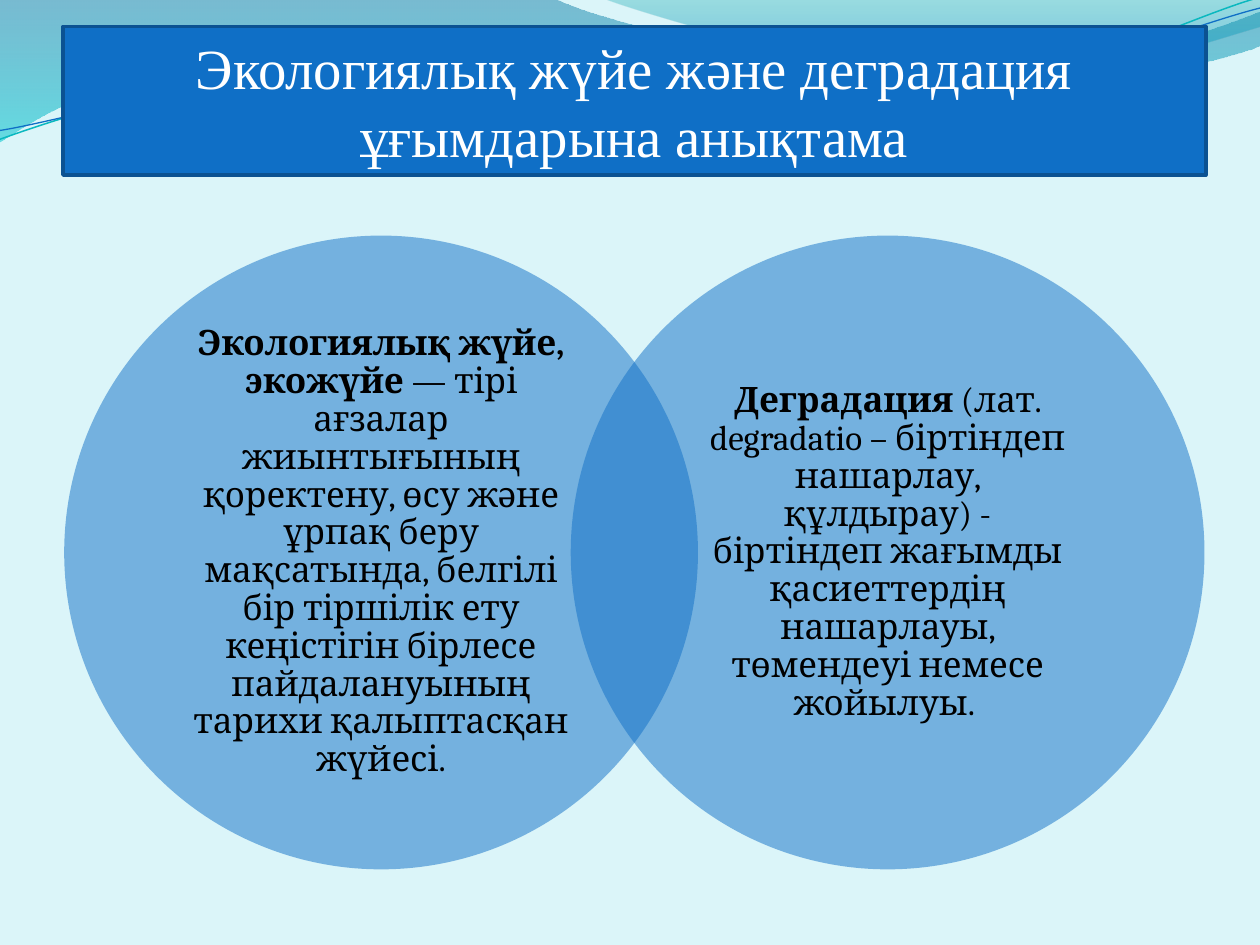
from pptx import Presentation
from pptx.dml.color import RGBColor
from pptx.enum import shapes, text
from pptx.oxml import ns
from pptx.util import Inches, Pt
from lxml import etree

BLUE = RGBColor(0x0F, 0x6F, 0xC6)
DARK_BLUE = RGBColor(0x0B, 0x52, 0x92)
TEAL = RGBColor(0x0A, 0xB8, 0xBF)
PALE = RGBColor(0xDB, 0xF5, 0xF9)
WHITE = RGBColor(0xFF, 0xFF, 0xFF)
BLACK = RGBColor(0, 0, 0)
WAVE_BLUE = RGBColor(0x00, 0x74, 0xA1)
WAVE_CYAN = RGBColor(0x00, 0xC6, 0xCF)
CREST_TEAL = RGBColor(0x00, 0xA1, 0xA9)
CREST_BLUE = RGBColor(0x00, 0x8B, 0xBF)

STRAND_TILT = -2.7

# Each segment is an end point (2 numbers) or a cubic curve (6 numbers).
WAVES = [
    ((0, 0), [(4.4, -0.01), (4.76, 0.17, 6.64, 0.63, 7.58, 0.63),
              (8.53, 0.63, 9.58, 0.26, 10, 0.09), (10.01, 0.36),
              (9.83, 0.44, 8.7, 0.76, 7.46, 0.75),
              (6.22, 0.75, 3.82, 0.28, 2.57, 0.34),
              (1.29, 0.36, 0.46, 0.83, -0.01, 1.13), (0, 0)],
     [(0, WAVE_BLUE, 45), (1, WAVE_CYAN, 55)]),
    ((4.79, -0.01), [(5.09, 0.11, 6.82, 0.62, 7.69, 0.65),
                     (8.56, 0.69, 9.61, 0.32, 10, 0.21), (10, 0),
                     (4.79, -0.01)],
     [(0, CREST_TEAL, 30), (0.8, CREST_BLUE, 45)]),
]
# Strands are given level and tilted afterwards.
STRANDS = [
    ((-0.02, 0.87), [(0.47, 0.72, 1.58, 0.41, 2.78, 0.42),
                     (3.96, 0.42, 5.91, 0.93, 7.12, 0.9),
                     (8.32, 0.87, 9.4, 0.36, 10, 0.22)], TEAL, 0.85),
    ((-0.02, 0.8), [(0.46, 0.75, 1.64, 0.45, 2.83, 0.46),
                    (4.03, 0.46, 5.96, 0.89, 7.16, 0.85),
                    (8.35, 0.83, 9.42, 0.42, 10.02, 0.3)], BLUE, 0.75),
]

TITLE = "Экологиялық жүйе және деградация ұғымдарына анықтама"
TERMS = [
    ("Экологиялық жүйе, экожүйе ",
     "— тірі ағзалар жиынтығының қоректену, өсу және ұрпақ беру мақсатында, "
     "белгілі бір тіршілік ету кеңістігін бірлесе пайдалануының тарихи "
     "қалыптасқан жүйесі."),
    ("Деградация",
     " (лат. degradatio – біртіндеп нашарлау, құлдырау) - біртіндеп жағымды "
     "қасиеттердің нашарлауы, төмендеуі немесе жойылуы. "),
]


def set_opacity(color_element, percent):
    alpha = etree.SubElement(color_element, ns.qn("a:alpha"))
    alpha.set("val", str(percent * 1000))


def add_outline(parts, start, segments, close):
    """Draw a freeform through the end points, then bend its cubic segments."""
    builder = parts.build_freeform(Inches(start[0]), Inches(start[1]))
    builder.add_line_segments(
        [(Inches(s[-2]), Inches(s[-1])) for s in segments], close=close)
    outline = builder.convert_to_shape()
    outline.shadow.inherit = False
    lines = list(outline._element.spPr.iter(ns.qn("a:lnTo")))
    left, top = (min(Inches(p[axis]) for p in [start, *segments])
                 for axis in (-2, -1))
    for line, segment in zip(lines, segments):
        if len(segment) == 2:
            continue
        line_parent = line.getparent()
        curve = etree.Element(ns.qn("a:cubicBezTo"))
        for x, y in zip(segment[::2], segment[1::2]):
            point = etree.SubElement(curve, ns.qn("a:pt"))
            point.set("x", str(Inches(x) - left))
            point.set("y", str(Inches(y) - top))
        line_parent.replace(line, curve)
    return outline


def add_waves(slide):
    for start, segments, stops in WAVES:
        wave = add_outline(slide.shapes, start, segments, close=True)
        wave.line.fill.background()
        wave.fill.gradient()
        wave.fill.gradient_angle = 270
        for stop, (position, color, _) in zip(wave.fill.gradient_stops, stops):
            stop.position = position
            stop.color.rgb = color
        colors = wave._element.spPr.iter(ns.qn("a:srgbClr"))
        for element, (_, _, opacity) in zip(colors, stops):
            set_opacity(element, opacity)
    strands = slide.shapes.add_group_shape()
    for start, segments, color, width in STRANDS:
        strand = add_outline(strands.shapes, start, segments, close=False)
        strand.rotation = STRAND_TILT
        strand.fill.background()
        strand.line.color.rgb = color
        strand.line.width = Pt(width)


def format_title(slide, left, top, width, height):
    title = slide.shapes.title
    slide.shapes._spTree.append(title._element)  # in front of the waves
    title.left, title.top, title.width, title.height = left, top, width, height
    title.fill.solid()
    title.fill.fore_color.rgb = BLUE
    title.line.color.rgb = DARK_BLUE
    title.line.width = Pt(2)
    frame = title.text_frame
    frame.text = TITLE
    frame.word_wrap = True
    frame.auto_size = text.MSO_AUTO_SIZE.NONE
    frame.vertical_anchor = text.MSO_ANCHOR.TOP
    frame.margin_left = frame.margin_right = frame.margin_bottom = 0
    frame.margin_top = Inches(0.05)
    paragraph = frame.paragraphs[0]
    paragraph.alignment = text.PP_ALIGN.CENTER
    font = paragraph.runs[0].font
    font.name, font.size = "Times New Roman", Pt(32.4)
    font.color.rgb = WHITE


def add_term_circle(parts, left, top, size, term, definition):
    circle = parts.add_shape(shapes.MSO_SHAPE.OVAL, left, top, size, size)
    circle.shadow.inherit = False
    circle.fill.solid()
    circle.fill.fore_color.rgb = BLUE
    set_opacity(next(circle._element.spPr.iter(ns.qn("a:srgbClr"))), 50)
    circle.line.fill.background()

    text_size = Inches(3.56)
    inset = (size - text_size) // 2
    label = parts.add_textbox(left + inset, top + inset, text_size, text_size)
    frame = label.text_frame
    frame.word_wrap = True
    frame.vertical_anchor = text.MSO_ANCHOR.MIDDLE
    frame.margin_left = frame.margin_right = Inches(0.28)
    frame.margin_top = frame.margin_bottom = Inches(0.03)
    paragraph = frame.paragraphs[0]
    paragraph.alignment = text.PP_ALIGN.CENTER
    paragraph.line_spacing = 0.9
    for words, bold in ((term, True), (definition, False)):
        run = paragraph.add_run()
        run.text = words
        run.font.name, run.font.size, run.font.bold = "Cambria", Pt(20), bold
        run.font.color.rgb = BLACK


def add_venn(slide, left, top, size, step):
    venn = slide.shapes.add_group_shape()
    for index, (term, definition) in enumerate(TERMS):
        add_term_circle(venn.shapes, left + index * step, top, size, term, definition)


def main():
    deck = Presentation()
    deck.slide_width, deck.slide_height = Inches(10), Inches(7.5)
    slide = deck.slides.add_slide(deck.slide_layouts[5])
    slide.background.fill.solid()
    slide.background.fill.fore_color.rgb = PALE
    add_waves(slide)
    format_title(slide, Inches(0.5), Inches(0.21), Inches(9.07), Inches(1.18))
    add_venn(slide, Inches(0.51), Inches(1.87), Inches(5.03), Inches(4.02))
    deck.save("out.pptx")


if __name__ == "__main__":
    main()
